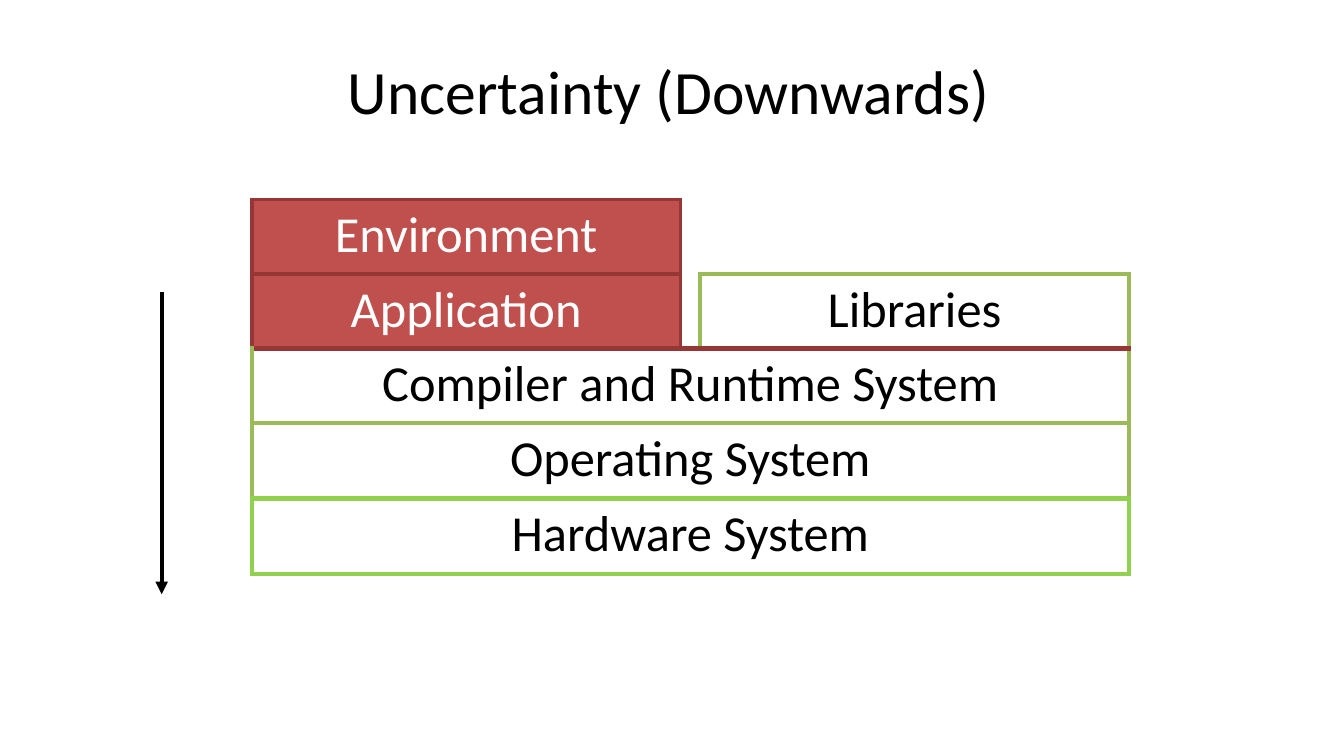
import dataclasses

import pptx
import pptx.dml.color
import pptx.enum.shapes
import pptx.enum.text
import pptx.oxml.ns
import pptx.util
from lxml import etree


@dataclasses.dataclass(frozen=True)
class Theme:
    font: str = "Calibri"
    title_size: int = 44
    label_size: int = 36
    line: float = 3
    heavy: float = 4.5
    black: str = "000000"
    white: str = "FFFFFF"
    red: str = "C0504D"
    dark_red: str = "953735"
    olive: str = "9BBB59"
    green: str = "92D050"


THEME = Theme()
NO_STYLE = "{2D5ABB26-0587-4C30-8999-92F81FD0307C}"
COLS = (408, 19, 408)
ROWS = (71, 71, 71, 72, 72)


def px(n):
    return pptx.util.Emu(n * 9525)


def rgb(color):
    return pptx.dml.color.RGBColor.from_string(color)


def child(parent, tag, **attrs):
    return etree.SubElement(parent, pptx.oxml.ns.qn(tag), **attrs)


def write(tf, text, *, size, color, before=0):
    p = tf.paragraphs[0]
    p.alignment = pptx.enum.text.PP_ALIGN.CENTER
    p.space_before = pptx.util.Pt(before)
    p.line_spacing = 1.0
    r = p.add_run()
    r.text = text
    r.font.name = THEME.font
    r.font.size = pptx.util.Pt(size)
    r.font.bold = False
    r.font.color.rgb = rgb(color)


def add_title(s, text):
    sp = s.shapes.title
    sp.left, sp.top, sp.width, sp.height = map(px, (52, 35, 1170, 106))
    tf = sp.text_frame
    tf.margin_left = tf.margin_right = tf.margin_bottom = 0
    tf.margin_top = px(15)
    tf.vertical_anchor = pptx.enum.text.MSO_ANCHOR.TOP
    tf.auto_size = pptx.enum.text.MSO_AUTO_SIZE.NONE
    write(tf, text, size=THEME.title_size, color=THEME.black, before=1)


def set_borders(cell, **edges):
    tc_pr = cell._tc.get_or_add_tcPr()
    for side in "LRTB":
        color, width = edges.get(side, (None, 0))
        ln = child(tc_pr, f"a:ln{side}", w=str(pptx.util.Pt(width)))
        if color:
            child(child(ln, "a:solidFill"), "a:srgbClr", val=color)
        else:
            child(ln, "a:noFill")


def fill_cell(cell, text="", fill=None, color=THEME.black, **edges):
    set_borders(cell, **edges)
    if fill:
        cell.fill.solid()
        cell.fill.fore_color.rgb = rgb(fill)
    else:
        cell.fill.background()
    cell.margin_left = cell.margin_right = cell.margin_bottom = 0
    cell.margin_top = px(5)
    if text:
        write(cell.text_frame, text, size=THEME.label_size, color=color, before=3.3)


def add_stack(s):
    frame = s.shapes.add_table(
        len(ROWS), len(COLS), px(240), px(190), px(sum(COLS)), px(sum(ROWS)))
    table = frame.table
    table.first_row = table.horz_banding = False
    table._tbl.tblPr.find(pptx.oxml.ns.qn("a:tableStyleId")).text = NO_STYLE
    for col, width in zip(table.columns, COLS):
        col.width = px(width)
    for row, height in zip(table.rows, ROWS):
        row.height = px(height)

    red = (THEME.dark_red, THEME.line)
    olive = (THEME.olive, THEME.line)
    green = (THEME.green, THEME.line)
    boundary = (THEME.dark_red, THEME.heavy)
    base = (THEME.green, THEME.heavy)

    table.cell(0, 1).merge(table.cell(0, 2))
    fill_cell(table.cell(0, 0), "Environment", THEME.red, THEME.white,
              L=red, R=red, T=red, B=red)
    fill_cell(table.cell(0, 1), L=red)
    fill_cell(table.cell(0, 2), B=olive)
    fill_cell(table.cell(1, 0), "Application", THEME.red, THEME.white,
              L=red, R=red, T=red, B=boundary)
    fill_cell(table.cell(1, 1), L=red, R=olive, B=boundary)
    fill_cell(table.cell(1, 2), "Libraries",
              L=olive, R=olive, T=olive, B=boundary)

    layers = (
        ("Compiler and Runtime System", olive, boundary, olive),
        ("Operating System", olive, olive, base),
        ("Hardware System", green, base, green),
    )
    for row, (text, side, top, bottom) in enumerate(layers, start=2):
        table.cell(row, 0).merge(table.cell(row, 2))
        fill_cell(table.cell(row, 0), text, L=side, R=side, T=top, B=bottom)
        for col in (1, 2):
            fill_cell(table.cell(row, col), R=side, T=top, B=bottom)


def add_arrow(s, x1, y1, x2, y2):
    cx = s.shapes.add_connector(
        pptx.enum.shapes.MSO_CONNECTOR.STRAIGHT, px(x1), px(y1), px(x2), px(y2))
    cx.line.color.rgb = rgb(THEME.black)
    cx.line.width = pptx.util.Pt(THEME.line)
    child(cx.line._get_or_add_ln(), "a:tailEnd", type="triangle")
    child(cx._element.spPr, "a:effectLst")


def main():
    prs = pptx.Presentation()
    prs.slide_width, prs.slide_height = px(1280), px(720)
    s = prs.slides.add_slide(prs.slide_layouts[5])
    add_title(s, "Uncertainty (Downwards)")
    add_stack(s)
    add_arrow(s, 154, 278, 154, 566)
    prs.save("out.pptx")


if __name__ == "__main__":
    main()
